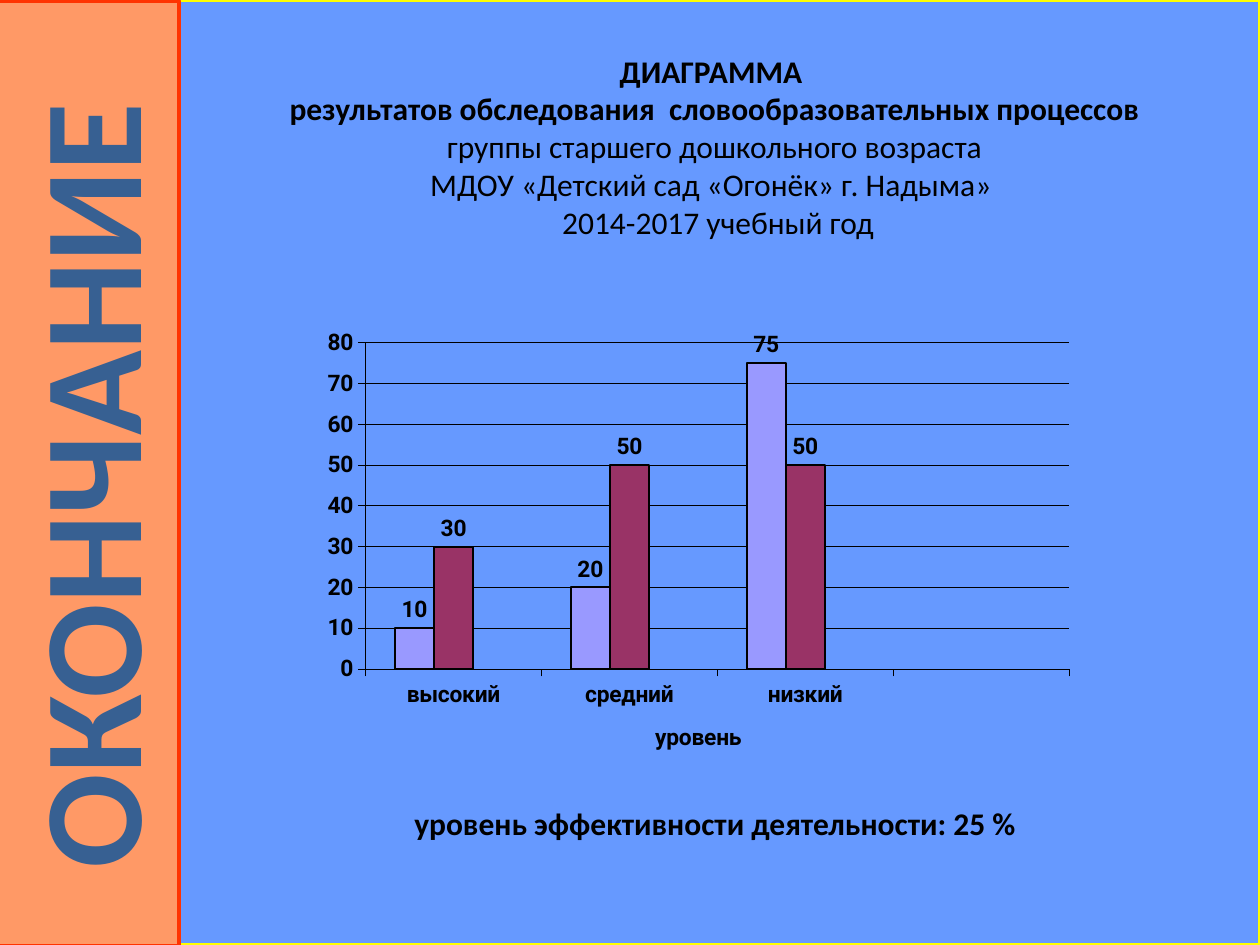
from dataclasses import dataclass

from lxml.etree import SubElement
from pptx import Presentation
from pptx.chart.data import CategoryChartData
from pptx.dml.color import RGBColor
from pptx.enum.chart import XL_CHART_TYPE as ChartType
from pptx.enum.chart import XL_LABEL_POSITION as LabelPosition
from pptx.enum.chart import XL_TICK_LABEL_POSITION as TickLabels
from pptx.enum.chart import XL_TICK_MARK as TickMark
from pptx.enum.shapes import MSO_SHAPE as Preset
from pptx.enum.text import MSO_ANCHOR as Anchor
from pptx.enum.text import MSO_AUTO_SIZE as AutoSize
from pptx.enum.text import PP_ALIGN as Align
from pptx.oxml.ns import qn
from pptx.util import Pt

BLACK = RGBColor(0x00, 0x00, 0x00)
SKY = RGBColor(0x66, 0x99, 0xFF)
YELLOW = RGBColor(0xFF, 0xFF, 0x00)
ORANGE = RGBColor(0xFF, 0x99, 0x66)
RED = RGBColor(0xFF, 0x33, 0x00)
NAVY = RGBColor(0x37, 0x60, 0x92)
LILAC = RGBColor(0x99, 0x99, 0xFF)
PLUM = RGBColor(0x99, 0x33, 0x66)
CREAM = RGBColor(0xFF, 0xFF, 0xCC)

TEXT_FONT = "Calibri"
CHART_FONT = "Roboto"
HAIRLINE = 0.28


@dataclass(frozen=True)
class Box:
    """Position and size in points."""
    left: float
    top: float
    width: float
    height: float

    def lengths(self) -> tuple:
        return Pt(self.left), Pt(self.top), Pt(self.width), Pt(self.height)


@dataclass(frozen=True)
class Panel:
    box: Box
    fill: RGBColor
    edge: RGBColor


@dataclass(frozen=True)
class Bars:
    name: str
    values: tuple
    color: RGBColor
    label_size: float = 13


PANELS = (
    Panel(Box(74.9, 0, 645.1, 540), SKY, YELLOW),
    Panel(Box(-2.9, 0.7, 105.1, 540), ORANGE, RED),
)
LEVELS = ("высокий", "средний", "низкий", "")
SERIES = (
    Bars("Series 1", (10, 20, 75, None), LILAC),
    Bars("Series 2", (30, 50, 50, None), PLUM),
    Bars("Series 3", (None,) * len(LEVELS), CREAM, 16.7),
)
PLOT_AREA = {"x": 0.111, "y": 0.054, "w": 0.871, "h": 0.638}

# Each paragraph is a list of (text, bold) runs.
HEADING = [
    [("ДИАГРАММА ", True)],
    [("результатов обследования  словообразовательных процессов ", True),
     ("группы старшего дошкольного возраста", False)],
    [("МДОУ «Детский сад «Огонёк» г. Надыма» ", False)],
    [(" 2014-2017 учебный год", False)],
]


def style_font(font, size: float, color=BLACK, bold=True, name=CHART_FONT) -> None:
    font.name, font.size, font.bold = name, Pt(size), bold
    font.color.rgb = color


def style_line(line, color=BLACK, width=HAIRLINE) -> None:
    line.color.rgb = color
    line.width = Pt(width)


def write(shape, paragraphs: list, *, size=18, color=BLACK,
          align=Align.CENTER, vertical=None) -> None:
    frame = shape.text_frame
    frame.word_wrap = True
    frame.auto_size = AutoSize.SHAPE_TO_FIT_TEXT
    frame.vertical_anchor = Anchor.TOP
    if vertical:
        frame._txBody.bodyPr.set("vert", vertical)
    for index, runs in enumerate(paragraphs):
        paragraph = frame.add_paragraph() if index else frame.paragraphs[0]
        paragraph.alignment = align
        for text, bold in runs:
            run = paragraph.add_run()
            run.text = text
            style_font(run.font, size, color, bold, TEXT_FONT)


def draw_panel(slide, panel: Panel) -> None:
    shape = slide.shapes.add_shape(Preset.RECTANGLE, *panel.box.lengths())
    shape.shadow.inherit = False
    shape.fill.solid()
    shape.fill.fore_color.rgb = panel.fill
    style_line(shape.line, panel.edge, 2)


def fix_plot_area(chart) -> None:
    """Pin the inner plot area to fractions of the chart frame."""
    plot_area = chart._chartSpace.chart.plotArea
    for old in plot_area.findall(qn("c:layout")):
        plot_area.remove(old)
    layout = SubElement(plot_area, qn("c:layout"))
    plot_area.insert(0, layout)
    manual = SubElement(layout, qn("c:manualLayout"))
    settings = {"layoutTarget": "inner", "xMode": "edge", "yMode": "edge", **PLOT_AREA}
    for tag, value in settings.items():
        SubElement(manual, qn(f"c:{tag}")).set("val", str(value))


def draw_chart(slide, box: Box) -> None:
    data = CategoryChartData()
    data.categories = LEVELS
    for bars in SERIES:
        data.add_series(bars.name, bars.values)
    chart = slide.shapes.add_chart(
        ChartType.COLUMN_CLUSTERED, *box.lengths(), data).chart
    chart.has_title = chart.has_legend = False
    style_font(chart.font, 16.7)
    fix_plot_area(chart)

    plot = chart.plots[0]
    plot.vary_by_categories = False
    plot.gap_width, plot.overlap = 150, 0
    for bars, series in zip(SERIES, plot.series):
        series.format.fill.solid()
        series.format.fill.fore_color.rgb = bars.color
        style_line(series.format.line, width=1.13)
        labels = series.data_labels
        labels.show_value = True
        labels.position = LabelPosition.OUTSIDE_END
        style_font(labels.font, bars.label_size)

    levels, scale = chart.category_axis, chart.value_axis
    for axis in (levels, scale):
        axis.major_tick_mark, axis.minor_tick_mark = TickMark.OUTSIDE, TickMark.NONE
        style_font(axis.tick_labels.font, 13)
        style_line(axis.format.line)
    levels.tick_label_position = TickLabels.LOW
    levels.axis_title.text_frame.text = "уровень"
    style_font(levels.axis_title.text_frame.paragraphs[0].runs[0].font, 13)
    scale.minimum_scale, scale.maximum_scale, scale.major_unit = 0, 80, 10
    scale.has_major_gridlines = True
    style_line(scale.major_gridlines.format.line)


def main() -> None:
    deck = Presentation()
    deck.slide_width, deck.slide_height = Pt(720), Pt(540)
    slide = deck.slides.add_slide(deck.slide_layouts[5])
    shapes = slide.shapes

    for panel in PANELS:
        draw_panel(slide, panel)
    draw_chart(slide, Box(157.7, 180, 461.5, 292.3))

    heading = shapes.title
    shapes._spTree.append(heading._element)  # bring in front of the panels
    heading.left, heading.top, heading.width, heading.height = Box(
        139, 25.9, 538.6, 138.2).lengths()
    write(heading, HEADING)

    result = shapes.add_textbox(*Box(229.7, 455.8, 376.6, 28.8).lengths())
    write(result, [[("уровень эффективности деятельности: 25 %", True)]], align=Align.LEFT)

    stage = shapes.add_textbox(*Box(-2.9, 31.7, 111.6, 491.8).lengths())
    write(stage, [[("ОКОНЧАНИЕ", True)]], size=80, color=NAVY, vertical="vert270")

    deck.save("out.pptx")


if __name__ == "__main__":
    main()
